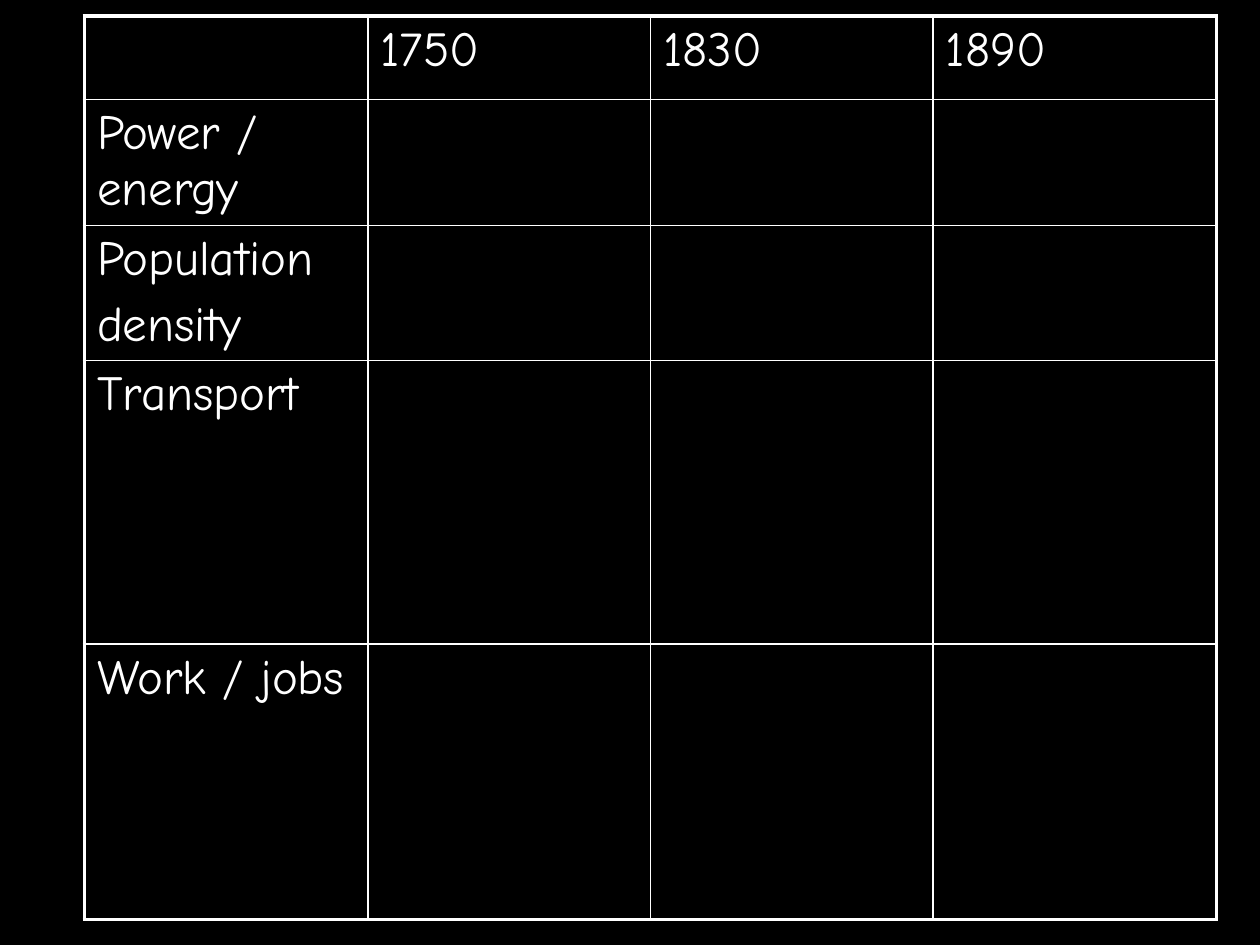
from dataclasses import dataclass

from lxml import etree
from pptx import Presentation
from pptx import util as u
from pptx.dml.color import RGBColor
from pptx.oxml import ns
from pptx.table import Table, _Cell

COLORS = {"background": "000000", "ink": "FFFFFF"}
FONT = "Comic Neue"
TEXT_SIZE = 28
OUTER, INNER = 2.25, 1
YEARS = ("1750", "1830", "1890")
COLUMN_WIDTHS = (162, 161.5, 161.5, 162)


@dataclass(frozen=True)
class Row:
    height: float
    label: tuple[str, ...] = ()
    values: tuple[str, ...] = ("",) * len(YEARS)


ROWS = (
    Row(47.5, values=YEARS),
    Row(72, ("Power / energy",)),
    Row(71, ("Population", "density")),
    Row(162, ("Transport",)),
    Row(157.5, ("Work / jobs",)),
)


def write_cell(cell: _Cell, lines: tuple[str, ...]) -> None:
    tf = cell.text_frame
    for i, line in enumerate(lines):
        p = tf.add_paragraph() if i else tf.paragraphs[0]
        p.space_before = u.Pt(0.2 * TEXT_SIZE)
        r = p.add_run()
        r.text = line
        r.font.name = FONT
        r.font.size = u.Pt(TEXT_SIZE)
        r.font.color.rgb = RGBColor.from_string(COLORS["ink"])


def set_borders(cell: _Cell, widths: dict[str, float]) -> None:
    """Add border lines keyed by side; the schema order is L, R, T, B."""
    tc_pr = cell._tc.get_or_add_tcPr()
    for side, width in widths.items():
        ln = etree.SubElement(tc_pr, ns.qn(f"a:ln{side}"), w=str(u.Pt(width)))
        fill = etree.SubElement(ln, ns.qn("a:solidFill"))
        etree.SubElement(fill, ns.qn("a:srgbClr"), val=COLORS["ink"])


def fill_table(table: Table) -> None:
    table.first_row = table.horz_banding = False
    for column, width in zip(table.columns, COLUMN_WIDTHS):
        column.width = u.Pt(width)
    last_row, last_col = len(ROWS) - 1, len(COLUMN_WIDTHS) - 1
    for i, row in enumerate(ROWS):
        table.rows[i].height = u.Pt(row.height)
        contents = (row.label, *((value,) if value else () for value in row.values))
        for j, lines in enumerate(contents):
            cell = table.cell(i, j)
            write_cell(cell, lines)
            set_borders(cell, {
                "L": OUTER if j == 0 else INNER,
                "R": OUTER if j == last_col else INNER,
                "T": OUTER if i == 0 else INNER,
                "B": OUTER if i == last_row else INNER,
            })
            cell.fill.background()


def main() -> None:
    prs = Presentation()
    prs.slide_width, prs.slide_height = u.Pt(720), u.Pt(540)
    s = prs.slides.add_slide(prs.slide_layouts[6])
    s.background.fill.solid()
    s.background.fill.fore_color.rgb = RGBColor.from_string(COLORS["background"])
    frame = s.shapes.add_table(
        len(ROWS), len(COLUMN_WIDTHS), u.Pt(48.25), u.Pt(9.25),
        u.Pt(sum(COLUMN_WIDTHS)), u.Pt(sum(row.height for row in ROWS)))
    fill_table(frame.table)
    prs.save("out.pptx")


if __name__ == "__main__":
    main()
